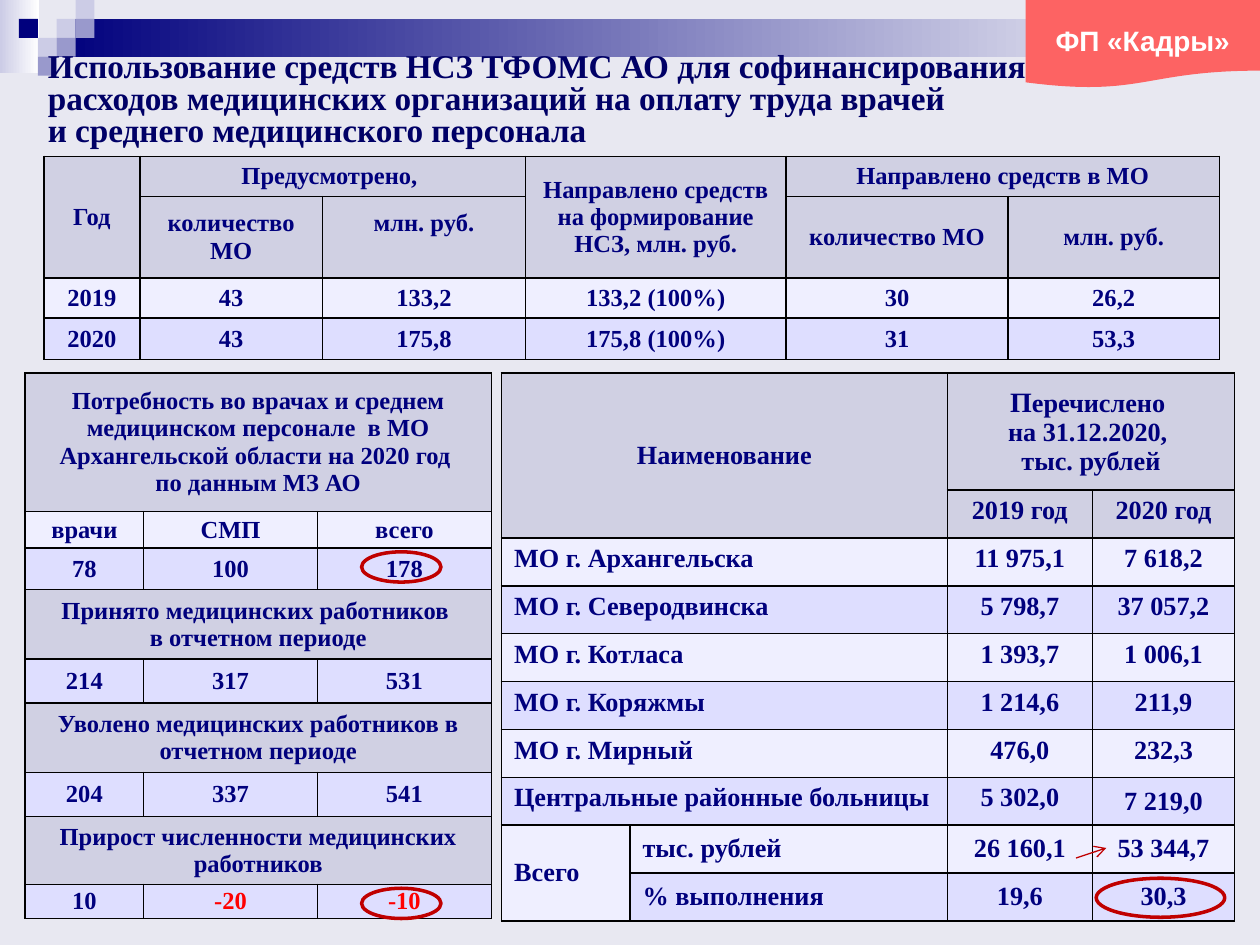
from lxml.etree import SubElement
from pptx import Presentation
from pptx.dml.color import RGBColor
from pptx.enum.shapes import MSO_CONNECTOR as LINK, MSO_SHAPE as SHAPE
from pptx.enum.text import MSO_ANCHOR as ANCHOR, PP_ALIGN as ALIGN
from pptx.oxml.ns import qn
from pptx.util import Inches, Pt

NAVY = RGBColor(0x00, 0x00, 0x7D)
TITLE_NAVY = RGBColor(0x00, 0x00, 0x66)
LILAC = RGBColor(0xCC, 0xCC, 0xE6)
VIOLET = RGBColor(0x99, 0x99, 0xCC)
WHITE = RGBColor(0xFF, 0xFF, 0xFF)
PAGE = RGBColor(0xE8, 0xE8, 0xF1)
HEAD = RGBColor(0xD0, 0xD0, 0xE3)
PALE = RGBColor(0xEF, 0xEF, 0xFF)
BLUE = RGBColor(0xDE, 0xDE, 0xFF)
CORAL = RGBColor(0xFD, 0x63, 0x63)
RED = RGBColor(0xFF, 0x00, 0x00)
MARK = RGBColor(0xC0, 0x00, 0x00)
SERIF = "Times New Roman"
UNIT = 0.15  # side of a corner square

# Text starts with its position; None is a cell covered by a merge
FUNDING = [
    ["Год", "Предусмотрено, ", None,
     "Направлено средств на формирование НСЗ, млн. руб.",
     "Направлено средств в МО", None],
    [None, "количество МО", "млн. руб.", None, "количество МО", "млн. руб."],
    ["2019", "43", "133,2", "133,2 (100%)", "30", "26,2"],
    ["2020", "43", "175,8", "175,8 (100%)", "31", "53,3"],
]
STAFF = [
    ["Потребность во врачах и среднем медицинском персонале  в МО "
     "Архангельской области на 2020 год \vпо данным МЗ АО", None, None],
    ["врачи", "СМП", "всего"],
    ["78", "100", "178"],
    ["Принято медицинских работников \vв отчетном периоде", None, None],
    ["214", "317", "531"],
    ["Уволено медицинских работников в отчетном периоде", None, None],
    ["204", "337", "541"],
    ["Прирост численности медицинских работников", None, None],
    ["10", "-20", "-10"],
]
PAYMENTS = [
    ["Наименование", None, "Перечислено \vна 31.12.2020, \nтыс. рублей", None],
    [None, None, "2019 год", "2020 год"],
    ["МО г. Архангельска", None, "11 975,1", "7 618,2"],
    ["МО г. Северодвинска", None, "5 798,7", "37 057,2"],
    ["МО г. Котласа", None, "1 393,7", "1 006,1"],
    ["МО г. Коряжмы", None, "1 214,6", "211,9"],
    ["МО г. Мирный", None, "476,0", "232,3"],
    ["Центральные районные больницы", None, "5 302,0", "7 219,0"],
    ["Всего", "тыс. рублей", "26 160,1", "53 344,7"],
    [None, "% выполнения", "19,6", "30,3"],
]


def style_text(frame, size, color, font=SERIF, align=ALIGN.CENTER):
    for paragraph in frame.paragraphs:
        paragraph.alignment = align
        paragraph.font.size = Pt(size)
        paragraph.font.name = font
        paragraph.font.bold = True
        paragraph.font.color.rgb = color


def add_block(slide, kind, box, *colors):
    """Borderless shape: one colour is solid, two make a gradient."""
    block = slide.shapes.add_shape(kind, *map(Inches, box))
    block.shadow.inherit = False
    block.line.fill.background()
    if len(colors) == 1:
        block.fill.solid()
        block.fill.fore_color.rgb = colors[0]
    else:
        block.fill.gradient()
        block.fill.gradient_angle = 0
        for stop, color in zip(block.fill.gradient_stops, colors):
            stop.color.rgb = color
    return block


def add_ring(slide, *box):
    ring = slide.shapes.add_shape(SHAPE.OVAL, *map(Inches, box))
    ring.shadow.inherit = False
    ring.fill.background()
    ring.line.color.rgb = MARK
    ring.line.width = Pt(2)


def add_arrow(slide, *ends):
    arrow = slide.shapes.add_connector(LINK.STRAIGHT, *map(Inches, ends))
    arrow.line.color.rgb = MARK
    arrow.line.width = Pt(0.75)
    SubElement(arrow.line._get_or_add_ln(), qn("a:tailEnd"), type="arrow")
    SubElement(arrow._element.spPr, qn("a:effectLst"))


def add_borders(cell):
    props = cell._tc.get_or_add_tcPr()
    for side in ("a:lnL", "a:lnR", "a:lnT", "a:lnB"):
        border = SubElement(props, qn(side), w=str(Pt(1)))
        SubElement(SubElement(border, qn("a:solidFill")), qn("a:srgbClr"), val="000000")


def add_grid(slide, corner, widths, heights, content, fills, merges, size, insets):
    frame = slide.shapes.add_table(len(heights), len(widths), *map(Inches, corner),
                                   Inches(sum(widths)), Inches(sum(heights)))
    table = frame.table
    table.first_row = table.horz_banding = False
    for column, width in zip(table.columns, widths):
        column.width = Inches(width)
    for row, height in zip(table.rows, heights):
        row.height = Inches(height)
    for r, (texts, fill) in enumerate(zip(content, fills)):
        for c, text in enumerate(texts):
            cell = table.cell(r, c)
            add_borders(cell)
            cell.fill.solid()
            cell.fill.fore_color.rgb = fill
            cell.vertical_anchor = ANCHOR.MIDDLE
            cell.margin_left = cell.margin_right = Inches(insets[0])
            cell.margin_top = cell.margin_bottom = Inches(insets[1])
            cell.text_frame.text = text or ""
            style_text(cell.text_frame, size, NAVY)
    for top, left, bottom, right in merges:
        table.cell(top, left).merge(table.cell(bottom, right))
    return table


def add_decor(slide):
    add_block(slide, SHAPE.RECTANGLE, (0, 0, 0.31, 0.58), LILAC, WHITE)
    add_block(slide, SHAPE.RECTANGLE, (3 * UNIT, UNIT, 9.55, 2 * UNIT), NAVY, WHITE)
    for column, row, color in [(3, 1, LILAC), (4, 0, LILAC), (4, 1, VIOLET), (2, 2, LILAC),
                               (1, 1, NAVY), (3, 2, VIOLET), (2, 3, VIOLET)]:
        add_block(slide, SHAPE.RECTANGLE, (column * UNIT, row * UNIT, UNIT, UNIT), color)


def add_title(slide):
    title = slide.shapes.title
    title.left, title.top, title.width, title.height = map(Inches, (0.28, 0.37, 8.43, 0.86))
    title.text_frame.text = ("Использование средств НСЗ ТФОМС АО для софинансирования расходов "
                             "медицинских организаций на оплату труда врачей "
                             "\vи среднего медицинского персонала")
    title.text_frame.vertical_anchor = ANCHOR.MIDDLE
    title.text_frame.paragraphs[0].line_spacing = 0.8
    style_text(title.text_frame, 19, TITLE_NAVY, align=ALIGN.LEFT)
    slide.shapes._spTree.append(title._element)  # in front of the bar


def add_staff(slide):
    staff = add_grid(slide, (0.2, 2.96), [0.94, 1.38, 1.38],
                     [1.1, 0.29, 0.33, 0.55, 0.35, 0.55, 0.35, 0.54, 0.27], STAFF,
                     [HEAD, PALE, BLUE] + [HEAD, BLUE] * 3,
                     [(r, 0, r, 2) for r in (0, 3, 5, 7)], 14, (0.06, 0))
    for column in (1, 2):
        staff.cell(8, column).text_frame.paragraphs[0].font.color.rgb = RED


def add_payments(slide):
    payments = add_grid(slide, (3.98, 2.96), [1.02, 2.52, 1.15, 1.13], [0.93] + [0.38] * 9,
                        PAYMENTS, [HEAD, HEAD] + [PALE, BLUE] * 4,
                        [(0, 0, 1, 1), (0, 2, 0, 3), (8, 0, 9, 0)]
                        + [(r, 0, r, 1) for r in range(2, 8)], 15, (0.1, 0.05))
    for r in range(2, 10):
        for c in (0, 1):
            payments.cell(r, c).text_frame.paragraphs[0].alignment = ALIGN.LEFT
    for r in range(1, 8):
        for c in range(4):
            payments.cell(r, c).vertical_anchor = ANCHOR.TOP
    payments.cell(7, 3).vertical_anchor = ANCHOR.MIDDLE
    # Larger first letter of the heading
    heading = payments.cell(0, 2).text_frame.paragraphs[0]
    heading.clear()
    initial = heading.add_run()
    initial.text = "П"
    initial.font.size = Pt(16)
    heading.add_run().text = "еречислено "
    heading.add_line_break()
    heading.add_run().text = "на 31.12.2020, "


def add_tag(slide):
    tag = add_block(slide, SHAPE.FLOWCHART_DOCUMENT, (8.14, 0, 1.86, 0.7), CORAL)
    tag.text_frame.text = "ФП «Кадры»"
    tag.text_frame.margin_top = Inches(0.13)
    tag.text_frame.vertical_anchor = ANCHOR.MIDDLE
    style_text(tag.text_frame, 16, WHITE, "Arial")


def add_funding(slide):
    funding = add_grid(slide, (0.35, 1.24), [0.76, 1.45, 1.61, 2.07, 1.76, 1.68],
                       [0.32, 0.64, 0.32, 0.33], FUNDING, [HEAD, HEAD, PALE, BLUE],
                       [(0, 0, 1, 0), (0, 1, 0, 2), (0, 3, 1, 3), (0, 4, 0, 5)], 14, (0.06, 0))
    funding.cell(1, 2).margin_bottom = Inches(0.23)


def main():
    deck = Presentation()
    deck.slide_width, deck.slide_height = Inches(10), Inches(7.5)
    slide = deck.slides.add_slide(deck.slide_layouts[5])
    slide.background.fill.solid()
    slide.background.fill.fore_color.rgb = PAGE
    add_decor(slide)
    add_title(slide)
    add_staff(slide)
    add_payments(slide)
    add_tag(slide)
    add_funding(slide)
    # Highlights of the key figures
    add_ring(slide, 8.7, 6.97, 1.02, 0.31)
    add_arrow(slide, 8.54, 6.81, 8.78, 6.73)
    for top in (4.38, 7.05):
        add_ring(slide, 2.87, top, 0.63, 0.24)
    deck.save("out.pptx")


if __name__ == "__main__":
    main()
